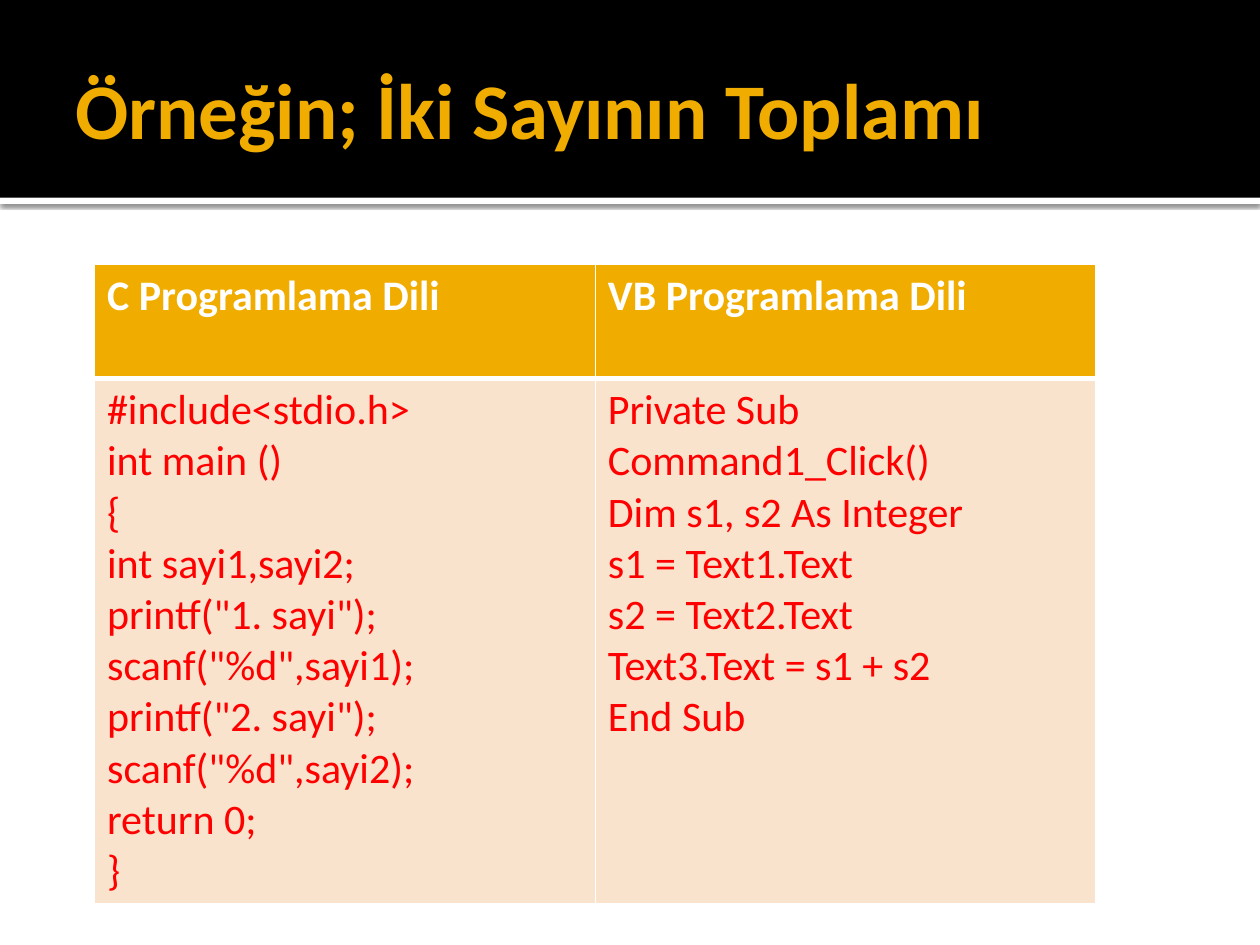
from lxml import etree
from pptx import Presentation
from pptx.dml.color import RGBColor
from pptx.enum.shapes import MSO_SHAPE
from pptx.enum.text import MSO_ANCHOR
from pptx.oxml import parse_xml
from pptx.oxml.ns import qn
from pptx.util import Pt

RECTANGLE = MSO_SHAPE.RECTANGLE
MIDDLE = MSO_ANCHOR.MIDDLE
DRAWING_NS = "http://schemas.openxmlformats.org/drawingml/2006/main"

BLACK, WHITE, GOLD, RED, CREAM = "000000", "FFFFFF", "F0AD00", "FF0000", "F9E3CC"

TITLE = "Örneğin; İki Sayının Toplamı"
PROGRAMS = [
    ("C Programlama Dili", [
        "#include<stdio.h>", "int main ()", "{", "int sayi1,sayi2;",
        'printf("1. sayi");', 'scanf("%d",sayi1);',
        'printf("2. sayi");', 'scanf("%d",sayi2);', "return 0;", "}"]),
    ("VB Programlama Dili", [
        "Private Sub Command1_Click()", "Dim s1, s2 As Integer",
        "s1 = Text1.Text", "s2 = Text2.Text", "Text3.Text = s1 + s2", "End Sub"]),
]

BANNER_HEIGHT, STRIP_HEIGHT = 113, 3.6
TABLE_LEFT, TABLE_TOP = 54, 151.2
COLUMN_WIDTH, HEADER_HEIGHT, CODE_HEIGHT = 286.2, 65, 300
THIN, THICK = 1, 3


def rgb(color):
    return RGBColor.from_string(color)


def write(frame, text, size=24, color=BLACK, bold=False):
    """Fill the first paragraph; newlines become line breaks."""
    frame.word_wrap = True
    paragraph = frame.paragraphs[0]
    paragraph.text = text
    for run in paragraph.runs:
        font = run.font
        font.name, font.size, font.bold = "Calibri", Pt(size), bold
        font.color.rgb = rgb(color)


def add_band(slide, top, height, color):
    band = slide.shapes.add_shape(RECTANGLE, 0, Pt(top), Pt(720), Pt(height))
    band.fill.solid()
    band.fill.fore_color.rgb = rgb(color)
    band.line.fill.background()
    band.shadow.inherit = False
    return band


def cast_shadow(shape):
    effects = shape._element.spPr.find(qn("a:effectLst"))
    effects.append(parse_xml(
        f'<a:outerShdw xmlns:a="{DRAWING_NS}" blurRad="{Pt(2.5)}" dist="{Pt(0.8)}" '
        f'dir="5400000"><a:srgbClr val="{BLACK}"><a:alpha val="60000"/></a:srgbClr>'
        '</a:outerShdw>'))


def set_borders(cell, top, bottom):
    properties = cell._tc.get_or_add_tcPr()
    widths = {"lnL": THIN, "lnR": THIN, "lnT": top, "lnB": bottom}
    for position, (side, width) in enumerate(widths.items()):
        border = etree.Element(qn(f"a:{side}"), w=str(Pt(width)))
        fill = etree.SubElement(border, qn("a:solidFill"))
        etree.SubElement(fill, qn("a:srgbClr"), val=WHITE)
        properties.insert(position, border)


def fill_cell(cell, text, fill, top, bottom, **text_format):
    cell.fill.solid()
    cell.fill.fore_color.rgb = rgb(fill)
    set_borders(cell, top, bottom)
    write(cell.text_frame, text, **text_format)


def add_title(slide):
    title = slide.shapes.add_textbox(Pt(36), Pt(12.24), Pt(648), Pt(98.64))
    frame = title.text_frame
    frame.vertical_anchor = MIDDLE
    frame.margin_left = Pt(7.2)
    frame.margin_right = Pt(3.6)
    write(frame, TITLE, size=45, color=GOLD, bold=True)


def add_programs(slide):
    table = slide.shapes.add_table(
        2, len(PROGRAMS), Pt(TABLE_LEFT), Pt(TABLE_TOP),
        Pt(COLUMN_WIDTH * len(PROGRAMS)), Pt(HEADER_HEIGHT + CODE_HEIGHT)).table
    table.horz_banding = False
    for row, height in zip(table.rows, (HEADER_HEIGHT, CODE_HEIGHT)):
        row.height = Pt(height)
    for column, (language, code) in enumerate(PROGRAMS):
        table.columns[column].width = Pt(COLUMN_WIDTH)
        fill_cell(table.cell(0, column), language, GOLD, THIN, THICK,
                  color=WHITE, bold=True)
        fill_cell(table.cell(1, column), "\n".join(code), CREAM, THICK, THIN,
                  color=RED)


def main():
    deck = Presentation()
    deck.slide_width, deck.slide_height = Pt(720), Pt(540)
    slide = deck.slides.add_slide(deck.slide_layouts[6])
    cast_shadow(add_band(slide, BANNER_HEIGHT, STRIP_HEIGHT, WHITE))
    add_band(slide, 0, BANNER_HEIGHT, BLACK)
    add_title(slide)
    add_programs(slide)
    deck.save("out.pptx")


if __name__ == "__main__":
    main()
